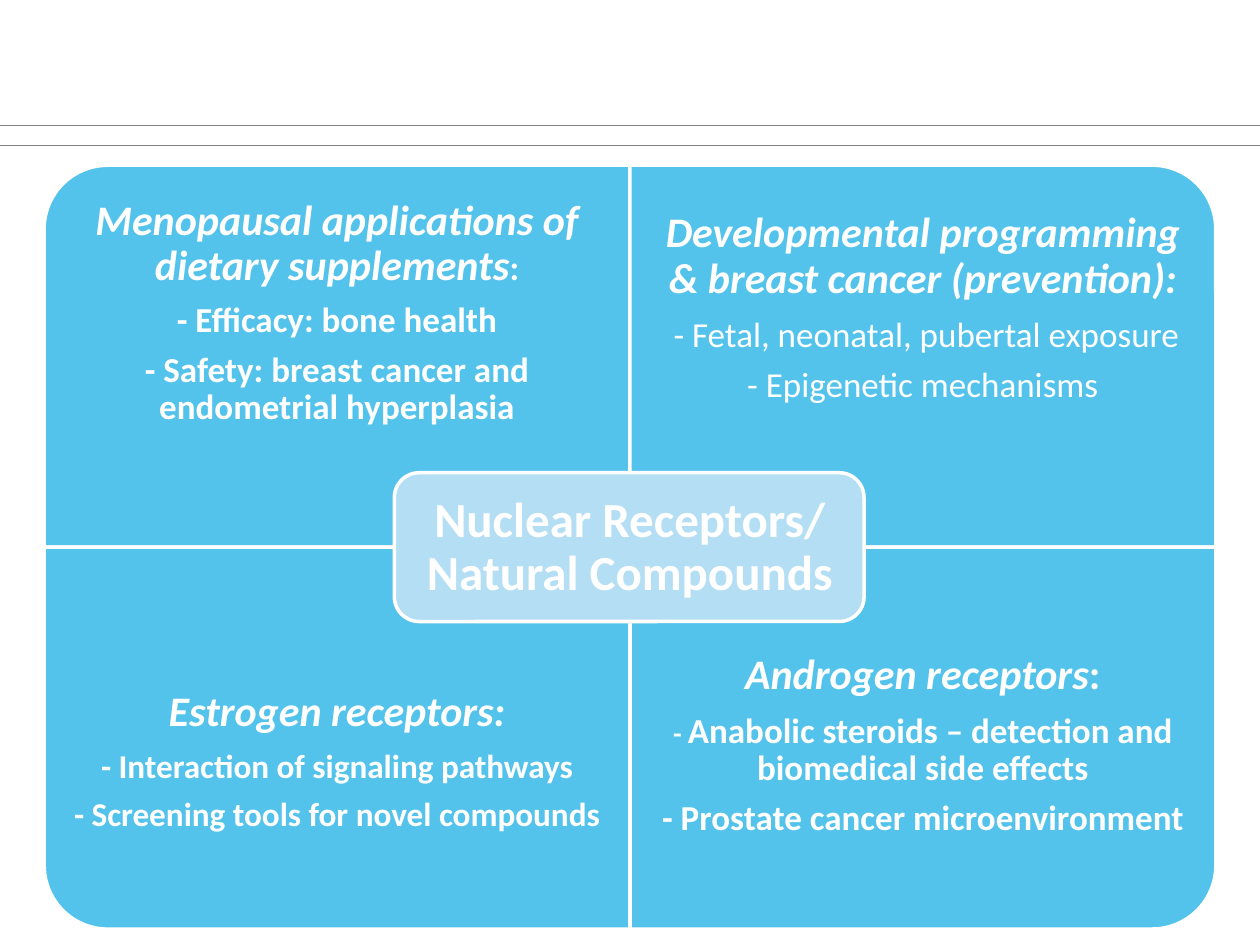
from lxml.etree import SubElement
from pptx import Presentation
from pptx.dml.color import RGBColor
from pptx.enum.shapes import MSO_CONNECTOR, MSO_SHAPE
from pptx.enum.text import MSO_ANCHOR, MSO_AUTO_SIZE, PP_ALIGN
from pptx.oxml.ns import qn
from pptx.util import Cm, Pt

COLORS = {"quadrant": "54C3EC", "center": "B4DEF4", "white": "FFFFFF", "rule": "808080"}
FONT = "Calibri"
LEFT, TOP, WIDTH, HEIGHT = 0.89, 3.33, 11.81, 7.7  # first quadrant, cm
TEXT_HEIGHT = 5.77
MARGIN = 0.48


def add_panel(preset, left, top, width, height, color):
    panel = slide.shapes.add_shape(preset, Cm(left), Cm(top), Cm(width), Cm(height))
    panel.shadow.inherit = False
    panel.fill.solid()
    panel.fill.fore_color.rgb = RGBColor.from_string(COLORS[color])
    panel.line.color.rgb = RGBColor.from_string(COLORS["white"])
    panel.line.width = Pt(2)
    return panel


def fill_text(text_frame, paragraphs, side, top, bottom):
    """Write paragraphs given as lists of (text, size, bold, italic) runs; margins in cm."""
    text_frame.word_wrap = True
    text_frame.auto_size = MSO_AUTO_SIZE.NONE
    text_frame.vertical_anchor = MSO_ANCHOR.MIDDLE
    text_frame.margin_left = text_frame.margin_right = Cm(side)
    text_frame.margin_top, text_frame.margin_bottom = Cm(top), Cm(bottom)
    for index, runs in enumerate(paragraphs):
        paragraph = text_frame.add_paragraph() if index else text_frame.paragraphs[0]
        paragraph.alignment = PP_ALIGN.CENTER
        paragraph.line_spacing = 0.9
        paragraph.space_before = Pt(0)
        paragraph.space_after = Pt(round(0.35 * runs[-1][1], 1))
        for text, size, bold, italic in runs:
            run = paragraph.add_run()
            run.text = text
            run.font.name, run.font.size = FONT, Pt(size)
            run.font.bold, run.font.italic = bold, italic
            run.font.color.rgb = RGBColor.from_string(COLORS["white"])


presentation = Presentation()
presentation.slide_width, presentation.slide_height = Cm(25.4), Cm(19.05)
slide = presentation.slides.add_slide(presentation.slide_layouts[5])

for y in (2.52, 2.93):
    rule = slide.shapes.add_connector(
        MSO_CONNECTOR.STRAIGHT, 0, Cm(y), presentation.slide_width, Cm(y))
    rule.line.color.rgb = RGBColor.from_string(COLORS["rule"])
    rule.line.width = Pt(0.5)
    SubElement(rule.element.spPr, qn("a:effectLst"))

# Column, row, rotation, top and bottom text margins, paragraphs
quadrants = [
    (0, 0, 270, MARGIN, 0.28, [
        [("Menopausal applications of dietary supplements", 24, True, True),
         (":", 20, True, False)],
        [("- Efficacy: bone health", 20, True, False)],
        [("- Safety: breast cancer and endometrial hyperplasia", 20, True, False)],
    ]),
    (1, 0, 0, MARGIN, MARGIN, [
        [("Developmental programming & breast cancer (prevention):", 24, True, True)],
        [(" ", 18, False, False), ("- Fetal, neonatal, pubertal exposure", 20, False, False)],
        [("- Epigenetic mechanisms", 20, False, False)],
    ]),
    (0, 1, 180, MARGIN, 1.45, [
        [("Estrogen receptors:", 24, True, True)],
        [("- Interaction of signaling pathways", 19, True, False)],
        [("- Screening tools for novel compounds", 19, True, False)],
    ]),
    (1, 1, 90, 0, 1.63, [
        [("Androgen receptors", 24, True, True), (":", 24, True, False)],
        [("- ", 16, True, False),
         ("Anabolic steroids – detection and biomedical side effects", 20, True, False)],
        [("- Prostate cancer microenvironment", 20, True, False)],
    ]),
]

for column, row, rotation, top_margin, bottom_margin, paragraphs in quadrants:
    left, top = LEFT + column * WIDTH, TOP + row * HEIGHT
    # A quarter turn swaps the sides around the same centre
    width, height = (HEIGHT, WIDTH) if rotation in (90, 270) else (WIDTH, HEIGHT)
    quadrant = add_panel(
        MSO_SHAPE.ROUND_1_RECTANGLE,
        left + (WIDTH - width) / 2, top + (HEIGHT - height) / 2, width, height, "quadrant")
    quadrant.rotation = rotation
    text_top = top + row * (HEIGHT - TEXT_HEIGHT)
    text_box = slide.shapes.add_textbox(Cm(left), Cm(text_top), Cm(WIDTH), Cm(TEXT_HEIGHT))
    fill_text(text_box.text_frame, paragraphs, MARGIN, top_margin, bottom_margin)

add_panel(MSO_SHAPE.ROUNDED_RECTANGLE, 7.95, 9.53, 9.47, 3, "center")
title = slide.shapes.title
title.left, title.top, title.width, title.height = Cm(8.1), Cm(9.68), Cm(9.19), Cm(2.72)
fill_text(title.text_frame, [[("Nuclear Receptors/ Natural Compounds", 28, True, False)]],
          0.3, 0.3, 0.3)
title.element.getparent().append(title.element)  # bring the title to the front

presentation.save("out.pptx")
